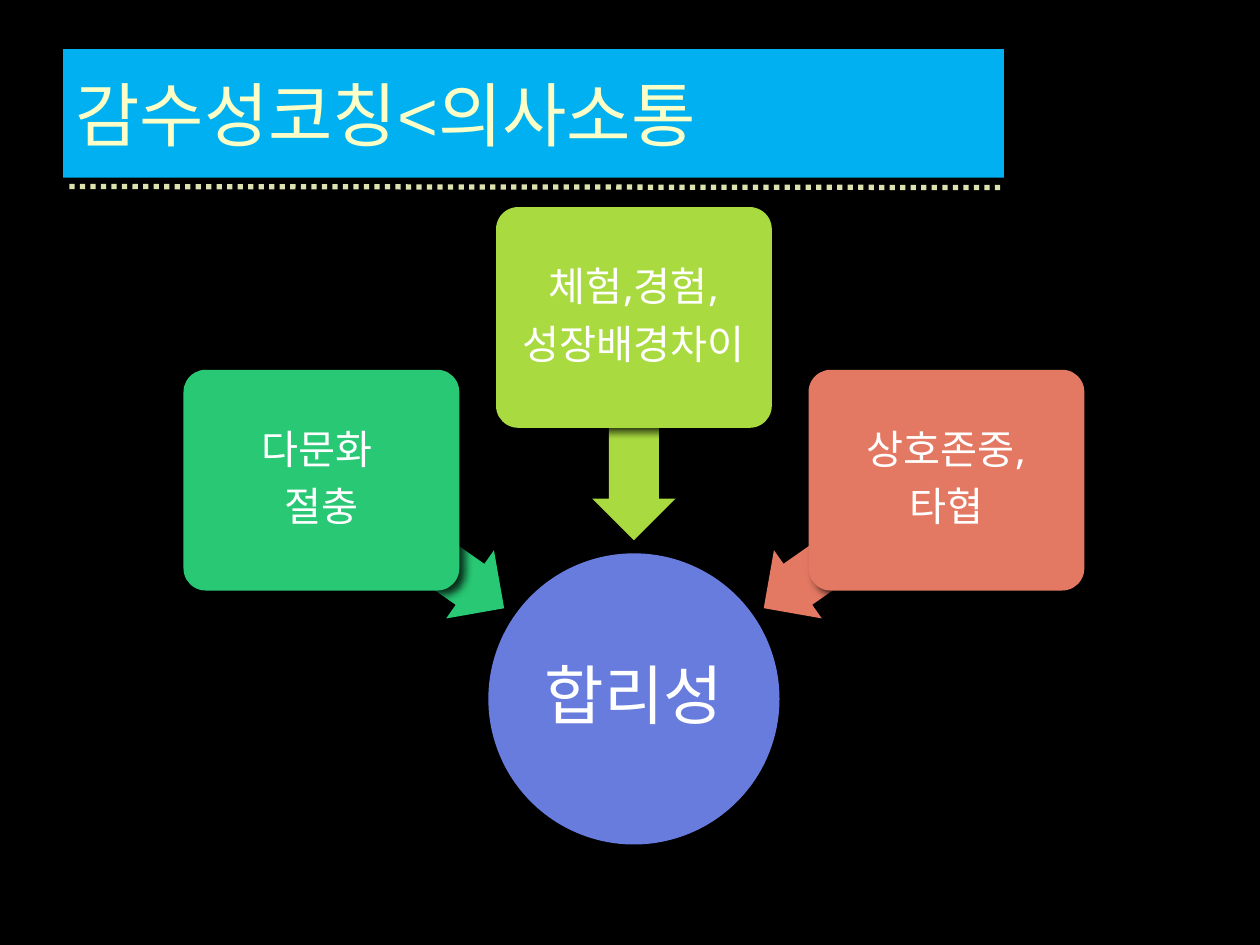
import lxml.etree
import pptx
import pptx.dml.color
import pptx.enum.dml
import pptx.enum.shapes
import pptx.enum.text
import pptx.oxml.ns
import pptx.util

Cm, Pt = pptx.util.Cm, pptx.util.Pt
SHAPE = pptx.enum.shapes.MSO_SHAPE
ALIGN = pptx.enum.text.PP_ALIGN
MIDDLE = pptx.enum.text.MSO_ANCHOR.MIDDLE
qn = pptx.oxml.ns.qn

COLORS = {
    "background": "000000", "banner": "00B0F0", "title": "FBFEC6",
    "rule": "DDE0AF", "circle": "687CDD", "green": "28C874",
    "lime": "A9DB40", "coral": "E47963", "text": "FFFFFF",
}


def rgb(name):
    return pptx.dml.color.RGBColor.from_string(COLORS[name])


class DiagramSlide:
    body_font = "Noto Sans"
    title_font = "Arial"

    def __init__(self, deck):
        self.slide = deck.slides.add_slide(deck.slide_layouts[5])
        fill = self.slide.background.fill
        fill.solid()
        fill.fore_color.rgb = rgb("background")

    def add_run(self, paragraph, text, font, size, color):
        run = paragraph.add_run()
        run.text = text
        run.font.name = font
        run.font.size = Pt(size)
        run.font.color.rgb = rgb(color)

    def shadow(self, shape, opacity, blur, distance):
        effects = shape._element.spPr.find(qn("a:effectLst"))
        if effects is None:
            effects = lxml.etree.SubElement(shape._element.spPr, qn("a:effectLst"))
        outer = lxml.etree.SubElement(
            effects, qn("a:outerShdw"), blurRad=str(Pt(blur)),
            dist=str(Pt(distance)), dir=str(40 * 60000), rotWithShape="0")
        color = lxml.etree.SubElement(outer, qn("a:srgbClr"), val="000000")
        lxml.etree.SubElement(color, qn("a:alpha"), val=str(opacity * 1000))

    def title(self, text, left, top, width, height):
        banner = self.slide.shapes.title
        banner.left, banner.top = Cm(left), Cm(top)
        banner.width, banner.height = Cm(width), Cm(height)
        banner.fill.solid()
        banner.fill.fore_color.rgb = rgb("banner")
        frame = banner.text_frame
        frame.vertical_anchor = MIDDLE
        frame.paragraphs[0].alignment = ALIGN.LEFT
        self.add_run(frame.paragraphs[0], text, self.title_font, 40, "title")

    def dotted_rule(self, x1, y1, x2, y2):
        rule = self.slide.shapes.add_connector(
            pptx.enum.shapes.MSO_CONNECTOR.STRAIGHT, Cm(x1), Cm(y1), Cm(x2), Cm(y2))
        rule.line.color.rgb = rgb("rule")
        rule.line.width = Pt(3)
        rule.line.dash_style = pptx.enum.dml.MSO_LINE.ROUND_DOT
        self.shadow(rule, 43, 4, 2)

    def block(self, kind, center_x, center_y, width, height, color, adjustments=()):
        shape = self.slide.shapes.add_shape(
            kind, Cm(center_x - width / 2), Cm(center_y - height / 2),
            Cm(width), Cm(height))
        shape.shadow.inherit = False
        shape.fill.solid()
        shape.fill.fore_color.rgb = rgb(color)
        shape.line.fill.background()
        for index, value in enumerate(adjustments):
            shape.adjustments[index] = value
        return shape

    def label(self, shape, lines, size, inset):
        self.shadow(shape, 78, 5, 4)
        frame = shape.text_frame
        frame.word_wrap = True
        frame.vertical_anchor = MIDDLE
        frame.margin_left = frame.margin_right = Cm(inset)
        frame.margin_top = frame.margin_bottom = Cm(inset)
        for index, text in enumerate(lines):
            paragraph = frame.add_paragraph() if index else frame.paragraphs[0]
            paragraph.alignment = ALIGN.CENTER
            paragraph.line_spacing = 0.9
            paragraph.space_after = Pt(0)
            # Space after is a share of the line height
            after = paragraph._p.pPr.find(qn("a:spcAft"))
            after.remove(after[0])
            lxml.etree.SubElement(after, qn("a:spcPct"), val="35000")
            self.add_run(paragraph, text, self.body_font, size, "text")

    def circle(self, text, center_x, center_y, diameter):
        shape = self.block(SHAPE.OVAL, center_x, center_y, diameter, diameter, "circle")
        self.label(shape, [text], 37, 0.08)

    def arrow(self, center_x, center_y, rotation, color):
        shape = self.block(SHAPE.LEFT_ARROW, center_x, center_y, 4.5, 1.68,
                           color, (0.6, 0.5))
        shape.rotation = rotation

    def card(self, lines, center_x, center_y, color):
        shape = self.block(SHAPE.ROUNDED_RECTANGLE, center_x, center_y, 5.56, 4.45,
                           color, (0.1,))
        self.label(shape, lines, 23, 0.13)


def main():
    deck = pptx.Presentation()
    deck.slide_width, deck.slide_height = Cm(25.4), Cm(19.05)
    page = DiagramSlide(deck)

    # Heading
    page.dotted_rule(1.4, 3.76, 20.24, 3.78)
    page.title("감수성코칭<의사소통", 1.27, 0.99, 18.97, 2.59)

    # Central idea
    middle = 12.78
    page.circle("합리성", middle, 14.09, 5.87)

    # Factors around it: side (-1, 0, 1), heights of card and arrow, arrow turn
    factors = [
        (["다문화 ", "절충"], -1, 9.68, 10.97, 215, "green"),
        (["체험,경험,", "성장배경차이"], 0, 6.4, 8.64, 270, "lime"),
        (["상호존중,", "타협"], 1, 9.68, 10.97, 325, "coral"),
    ]
    for lines, side, card_y, arrow_y, turn, color in factors:
        page.arrow(middle + side * 4.46, arrow_y, turn, color)
        page.card(lines, middle + side * 6.3, card_y, color)

    deck.save("out.pptx")


if __name__ == "__main__":
    main()
